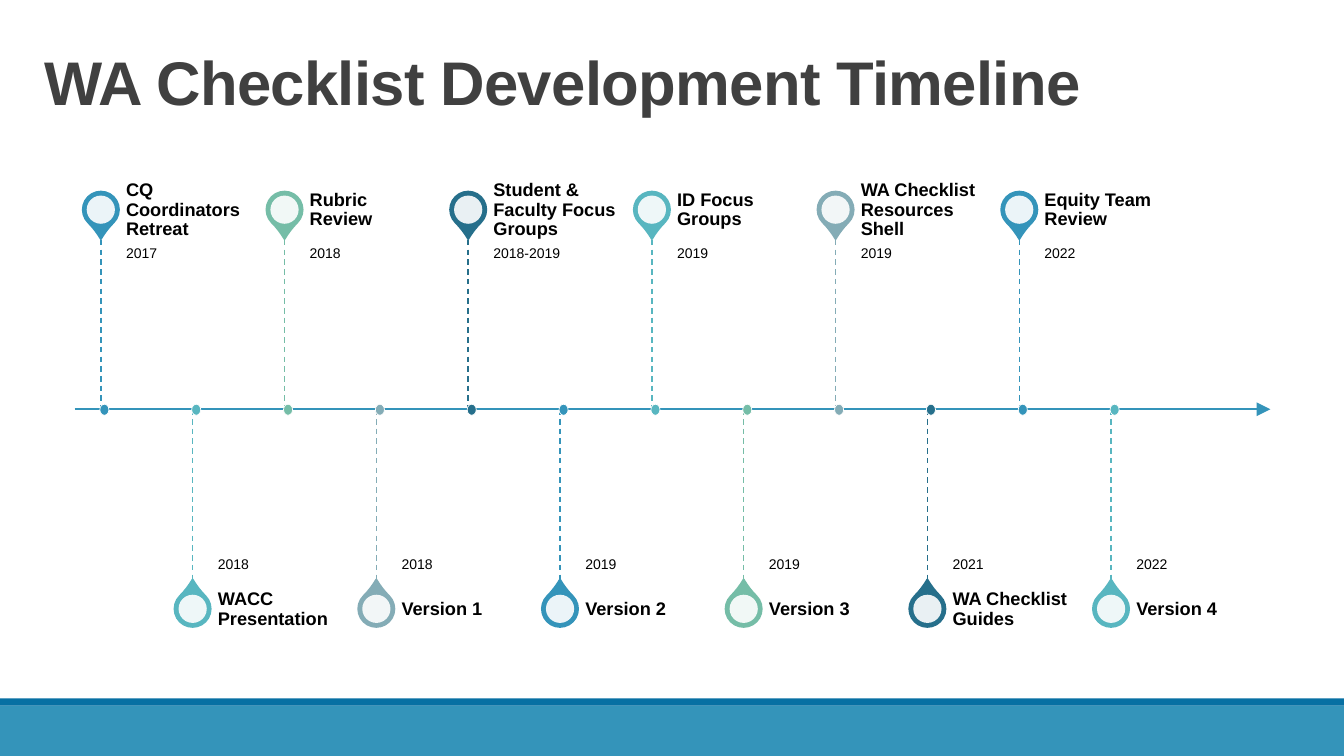
from pptx import Presentation
from pptx.dml.color import RGBColor
from pptx.enum.dml import MSO_LINE
from pptx.enum.shapes import MSO_CONNECTOR, MSO_SHAPE
from pptx.enum.text import MSO_ANCHOR, PP_ALIGN
from pptx.oxml.ns import qn
from pptx.util import Inches, Pt
from lxml import etree

RECT, OVAL, TEAR = MSO_SHAPE.RECTANGLE, MSO_SHAPE.OVAL, MSO_SHAPE.TEAR
TOP, MIDDLE, BOTTOM = MSO_ANCHOR.TOP, MSO_ANCHOR.MIDDLE, MSO_ANCHOR.BOTTOM
LEFT = PP_ALIGN.LEFT
STRAIGHT, DASH = MSO_CONNECTOR.STRAIGHT, MSO_LINE.DASH


class Theme:
    font = "Arial"
    title, name, year = Pt(44), Pt(13), Pt(10)
    grey, black, white = "404040", "000000", "FFFFFF"
    blue, band = "3494BA", "0770A3"
    cycle = [blue, "58B6C0", "75BDA7", "84ACB6", "266F8B"]


def paint(kind, box, fill, edge=None, width=0):
    item = shapes.add_shape(kind, *map(Inches, box))
    item.shadow.inherit = False
    item.fill.solid()
    item.fill.fore_color.rgb = RGBColor.from_string(fill)
    if edge:
        item.line.color.rgb = RGBColor.from_string(edge)
        item.line.width = Pt(width)
    else:
        item.line.fill.background()
    return item


def rule(start, end, color, width):
    """Draw a straight line without a shadow."""
    line = shapes.add_connector(STRAIGHT, *map(Inches, start + end))
    line.line.color.rgb = RGBColor.from_string(color)
    line.line.width = Pt(width)
    etree.SubElement(line._element.spPr, qn("a:effectLst"))
    return line


deck = Presentation()
deck.slide_width, deck.slide_height = Inches(13.33), Inches(7.5)
slide = deck.slides.add_slide(deck.slide_layouts[5])
shapes = slide.shapes

# Footer bands
paint(RECT, (0, 7, 13.33, 0.5), Theme.blue)
paint(RECT, (0, 6.93, 13.33, 0.07), Theme.band)

# Title
title = shapes.title
title.left, title.top = Inches(0.34), Inches(0.31)
title.width, title.height = Inches(12.62), Inches(1.11)
frame = title.text_frame
frame.text = "WA Checklist Development Timeline"
frame.vertical_anchor = MIDDLE
para = frame.paragraphs[0]
para.alignment, para.line_spacing = LEFT, 0.85
run = para.runs[0]
run.font.name, run.font.size, run.font.bold = Theme.font, Theme.title, True
run.font.color.rgb = RGBColor.from_string(Theme.grey)
run._r.get_or_add_rPr().set("spc", "-50")

# Time axis
axis = 4.06
arrow = rule((0.74, axis), (12.6, axis), Theme.blue, 1.5)
etree.SubElement(arrow.line._get_or_add_ln(), qn("a:tailEnd"),
                 type="triangle", w="lg", len="lg")

# Milestones alternate above and below the axis
events = [
    ("CQ Coordinators Retreat", "2017"),
    ("WACC Presentation", "2018"),
    ("Rubric Review", "2018"),
    ("Version 1", "2018"),
    ("Student & Faculty Focus Groups", "2018-2019"),
    ("Version 2", "2019"),
    ("ID Focus Groups", "2019"),
    ("Version 3", "2019"),
    ("WA Checklist Resources Shell", "2019"),
    ("WA Checklist Guides", "2021"),
    ("Equity Team Review", "2022"),
    ("Version 4", "2022"),
]
first, last = 1, 11.02
step = (last - first) / (len(events) - 1)

for i, (name, year) in enumerate(events):
    x = first + i * step
    color = Theme.cycle[i % len(Theme.cycle)]
    if i % 2 == 0:
        pin_y, turn, tip, name_y = 1.9, 135, 2.38, 1.79
        year_y, anchor, pads = 2.38, TOP, (0, 0.07, 0.07, 0.1)
    else:
        pin_y, turn, tip, name_y = 5.86, 315, 5.75, 5.75
        year_y, anchor, pads = axis, BOTTOM, (0, 0.1, 0, 0.07)

    pin = paint(TEAR, (x - 0.18, pin_y, 0.36, 0.36), color, color, 1.25)
    pin.adjustments[0] = 1.15
    pin.rotation = turn
    hole = paint(OVAL, (x - 0.14, pin_y + 0.04, 0.28, 0.28), Theme.white)
    tint = hole._element.spPr.find(qn("a:solidFill"))[0]
    etree.SubElement(tint, qn("a:alpha"), val="90000")

    labels = [
        (year, year_y, 1.68, anchor, pads, Theme.year, False),
        (name, name_y, 0.59, MIDDLE, (0, 0, 0.09, 0), Theme.name, True),
    ]
    for text, y, high, hold, inset, size, bold in labels:
        box = shapes.add_textbox(*map(Inches, (x + 0.25, y, 1.32, high)))
        frame = box.text_frame
        frame.word_wrap = True
        frame.vertical_anchor = hold
        (frame.margin_left, frame.margin_top,
         frame.margin_right, frame.margin_bottom) = map(Inches, inset)
        frame.text = text
        para = frame.paragraphs[0]
        para.line_spacing = 0.9
        font = para.runs[0].font
        font.name, font.size, font.bold = Theme.font, size, bold
        font.color.rgb = RGBColor.from_string(Theme.black)

    ends = sorted([tip, axis])
    stem = rule((x, ends[0]), (x, ends[1]), color, 1)
    stem.line.dash_style = DASH
    paint(OVAL, (x - 0.01, axis - 0.05, 0.09, 0.11), color, Theme.white, 0.5)

deck.save("out.pptx")
